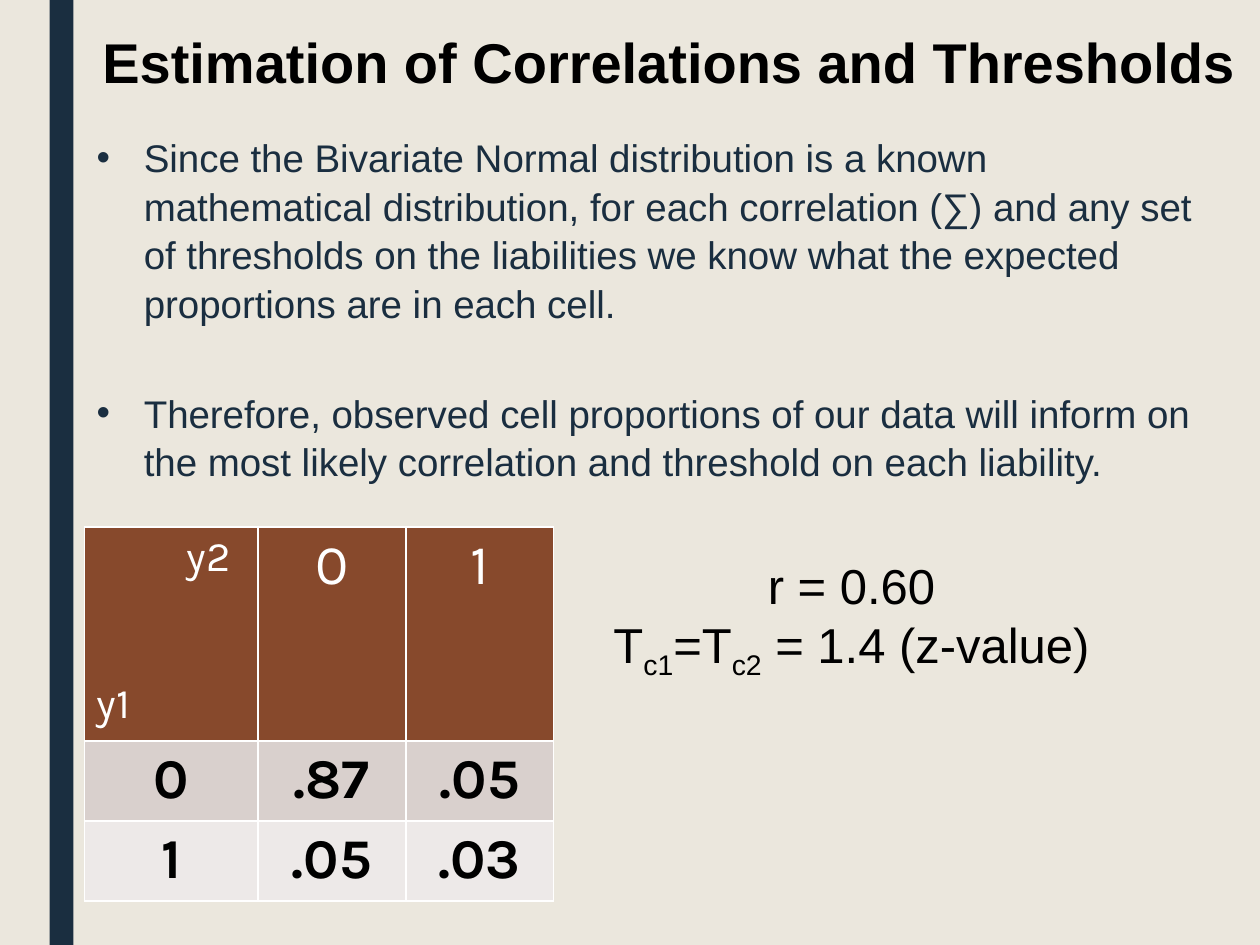
from lxml import etree
from pptx import Presentation, util as u
from pptx.dml.color import RGBColor
from pptx.enum import shapes, text
from pptx.oxml.ns import qn

NAVY, BLACK, WHITE = "1A2E40", "000000", "FFFFFF"
BACKGROUND, HEADER_FILL = "EBE7DD", "87492C"
ROW_FILLS = [HEADER_FILL, "D9D0CD", "EDE9E8"]
CENTER = text.PP_ALIGN.CENTER
BULLETS = [
    "Since the Bivariate Normal distribution is a known mathematical distribution, "
    "for each correlation (∑) and any set of thresholds on the liabilities we know "
    "what the expected proportions are in each cell.",
    "Therefore, observed cell proportions of our data will inform on the most likely "
    "correlation and threshold on each liability.",
]
PROPORTIONS = [["y2\ny1", "0", "1"], ["0", ".87", ".05"], ["1", ".05", ".03"]]


def color(value):
    return RGBColor.from_string(value)


def format_runs(paragraph, size, font_color, name="Arial", bold=False):
    for run in paragraph.runs:
        run.font.size = u.Pt(size)
        run.font.name = name
        run.font.bold = bold
        run.font.color.rgb = color(font_color)


def add_text(slide, left, top, width, height, wrap=True):
    shape = slide.shapes.add_textbox(u.Cm(left), u.Cm(top), u.Cm(width), u.Cm(height))
    shape.text_frame.word_wrap = wrap
    return shape.text_frame


def add_side_bar(slide, height):
    bar = slide.shapes.add_shape(shapes.MSO_SHAPE.RECTANGLE, u.Cm(1), 0, u.Cm(0.48), height)
    bar.shadow.inherit = False
    bar.fill.solid()
    bar.fill.fore_color.rgb = color(NAVY)
    bar.line.fill.background()


def add_title(slide):
    frame = add_text(slide, 1.57, 0.43, 23.85, 1.6, wrap=False)
    frame.text = "Estimation of Correlations and Thresholds"
    frame.paragraphs[0].alignment = CENTER
    format_runs(frame.paragraphs[0], 32, BLACK, bold=True)


def add_bullets(slide):
    frame = add_text(slide, 1.7, 2.54, 22.86, 7.4)
    frame.text = "\n".join(BULLETS)
    for paragraph in frame.paragraphs:
        paragraph.line_spacing = 1.05
        format_runs(paragraph, 22, NAVY)
        properties = paragraph._p.get_or_add_pPr()
        properties.set("marL", str(u.Cm(0.95)))
        properties.set("indent", str(-u.Cm(0.95)))
        etree.SubElement(properties, qn("a:buFont"), typeface="Arial")
        etree.SubElement(properties, qn("a:buChar"), char="•")
    frame.paragraphs[1].space_before = u.Pt(35)


def add_borders(cell):
    properties = cell._tc.get_or_add_tcPr()
    for side in ("lnL", "lnR", "lnT", "lnB"):
        line = etree.SubElement(properties, qn(f"a:{side}"), w=str(u.Pt(1)))
        fill = etree.SubElement(line, qn("a:solidFill"))
        etree.SubElement(fill, qn("a:srgbClr"), val=WHITE)


def format_corner(cell):
    """Place the column variable top right and the row variable bottom left."""
    column_label, row_label = cell.text_frame.paragraphs
    column_label._p.get_or_add_pPr().set("marL", str(u.Cm(1.81)))
    row_label.space_before = u.Pt(56)
    for paragraph in (column_label, row_label):
        paragraph.alignment = text.PP_ALIGN.LEFT
        format_runs(paragraph, 24, WHITE, "Karla")


def add_proportions_table(slide):
    frame = slide.shapes.add_table(3, 3, u.Cm(1.7), u.Cm(10.62), u.Cm(9.46), u.Cm(7.54))
    table = frame.table
    table.horz_banding = False
    for column, width in zip(table.columns, (3.5, 2.98, 2.98)):
        column.width = u.Cm(width)
    for row, height in zip(table.rows, (4.32, 1.61, 1.61)):
        row.height = u.Cm(height)
    for row_index, values in enumerate(PROPORTIONS):
        header = row_index == 0
        for column_index, value in enumerate(values):
            cell = table.cell(row_index, column_index)
            cell.text_frame.text = value
            add_borders(cell)
            cell.fill.solid()
            cell.fill.fore_color.rgb = color(ROW_FILLS[row_index])
            for paragraph in cell.text_frame.paragraphs:
                paragraph.alignment = CENTER
                format_runs(paragraph, 32, WHITE if header else BLACK, "Karla", not header)
    format_corner(table.cell(0, 0))


def add_estimates(slide):
    frame = add_text(slide, 12.07, 11.07, 10.19, 2.64, wrap=False)
    frame.text = "r = 0.60"
    thresholds = frame.add_paragraph()
    for part in ("T", "c1", "=T", "c2", " = 1.4 (z-value)"):
        run = thresholds.add_run()
        run.text = part
        if part.startswith("c"):
            run.font._element.set("baseline", "-25000")
    for paragraph in frame.paragraphs:
        paragraph.alignment = CENTER
        format_runs(paragraph, 28, BLACK)


def main():
    presentation = Presentation()
    presentation.slide_width = u.Cm(25.4)
    presentation.slide_height = u.Cm(19.05)
    slide = presentation.slides.add_slide(presentation.slide_layouts[6])
    slide.background.fill.solid()
    slide.background.fill.fore_color.rgb = color(BACKGROUND)
    add_side_bar(slide, presentation.slide_height)
    add_title(slide)
    add_proportions_table(slide)
    add_bullets(slide)
    add_estimates(slide)
    presentation.save("out.pptx")


if __name__ == "__main__":
    main()
